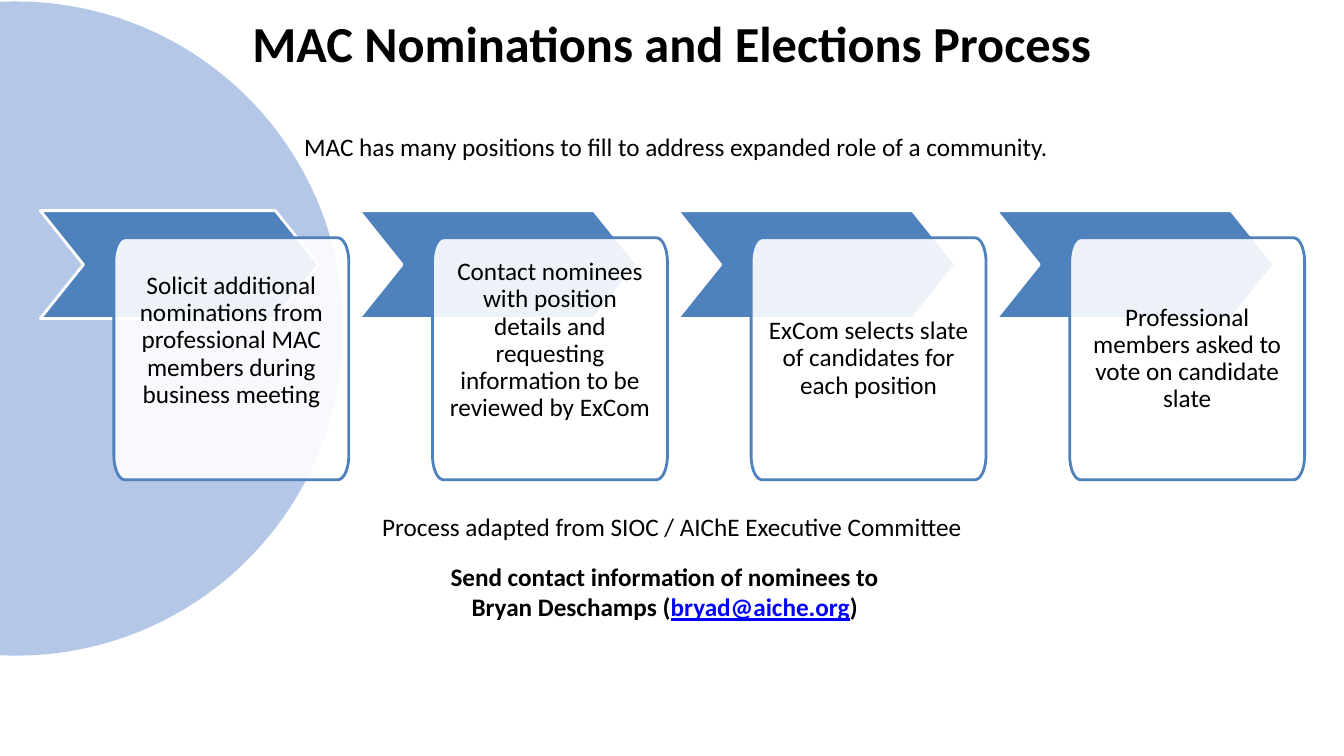
import math
from lxml import etree
from pptx import Presentation, util as u
from pptx.dml.color import RGBColor
from pptx.enum import shapes, text
from pptx.oxml.ns import qn

HUE = {"disc": "B4C7E7", "step": "4F81BD", "white": "FFFFFF",
       "ink": "000000", "mail": "0000FF"}
LEFT, TOP, PITCH = 0.4, 2.09, 3.16
STEPS = [
    ("Solicit additional nominations from professional MAC members during business meeting", 0.5),
    ("Contact nominees with position details and requesting information to be reviewed by ExCom", 0.5),
    ("ExCom selects slate of candidates for each position", 0.14),
    ("Professional members asked to vote on candidate slate", 0.14),
]


def rgb(name):
    return RGBColor.from_string(HUE[name])


def paint(shape, fill, line=None):
    shape.shadow.inherit = False
    shape.fill.solid()
    shape.fill.fore_color.rgb = rgb(fill)
    if line:
        shape.line.color.rgb = rgb(line)
        shape.line.width = u.Pt(2)
    else:
        shape.line.fill.background()


def arc(cx, cy, rx, ry, start, end, count):
    turns = [math.radians(start + (end - start) * i / count) for i in range(count + 1)]
    return [(cx + rx * math.cos(t), cy + ry * math.sin(t)) for t in turns]


def outline(slide, points):
    dots = [(u.Inches(x), u.Inches(y)) for x, y in points]
    pen = slide.shapes.build_freeform(*dots[0])
    pen.add_line_segments(dots[1:], close=True)
    return pen.convert_to_shape()


def write(para, words, size=18, bold=False, hue="ink", under=False):
    run = para.add_run()
    run.text = words
    font = run.font
    font.name, font.size, font.bold, font.underline = "Calibri", u.Pt(size), bold, under
    font.color.rgb = rgb(hue)


def label(slide, x, y, w, h):
    box = slide.shapes.add_textbox(*map(u.Inches, (x, y, w, h)))
    box.text_frame.word_wrap = True
    para = box.text_frame.paragraphs[0]
    para.alignment = text.PP_ALIGN.CENTER
    return box.text_frame, para


def disc(slide):
    mid, rad = 0.16, 3.245
    edge = math.degrees(math.acos(-mid / rad))
    paint(outline(slide, arc(mid, 3.26, rad, rad, -edge, edge, 120)), "disc")


def card(slide, x, y, w, h, words, base):
    rx, ry = 0.11, 0.24
    mids = [(x + rx, y + ry), (x + w - rx, y + ry),
            (x + w - rx, y + h - ry), (x + rx, y + h - ry)]
    points = [dot for i, (cx, cy) in enumerate(mids)
              for dot in arc(cx, cy, rx, ry, 180 + 90 * i, 270 + 90 * i, 12)]
    shape = outline(slide, points)
    paint(shape, "white", "step")
    tint = shape.fill._xPr.find(qn("a:solidFill"))[0]
    etree.SubElement(tint, qn("a:alpha")).set("val", "90000")
    frame = shape.text_frame
    frame.word_wrap = True
    frame.vertical_anchor = text.MSO_ANCHOR.MIDDLE
    frame.margin_left = frame.margin_right = frame.margin_top = u.Inches(0.14)
    frame.margin_bottom = u.Inches(base)
    para = frame.paragraphs[0]
    para.alignment = text.PP_ALIGN.CENTER
    para.line_spacing = 0.9
    write(para, words)


def step(slide, col, words, base):
    x = LEFT + PITCH * col
    arrow = slide.shapes.add_shape(shapes.MSO_SHAPE.CHEVRON,
                                   *map(u.Inches, (x, TOP, 2.76, 1.07)))
    arrow.adjustments[0] = 0.4
    paint(arrow, "step", "white")
    card(slide, x + 0.73, TOP + 0.27, 2.33, 2.4, words, base)


def main():
    deck = Presentation()
    deck.slide_width, deck.slide_height = u.Inches(13.33), u.Inches(7.5)
    slide = deck.slides.add_slide(deck.slide_layouts[6])
    disc(slide)

    frame, para = label(slide, 1.01, 0.12, 11.31, 0.63)
    frame.margin_left = frame.margin_right = frame.margin_top = frame.margin_bottom = 0
    write(para, "MAC Nominations and Elections Process", 36, True)

    for col, (words, base) in enumerate(STEPS):
        step(slide, col, words, base)

    for x, y, words in [
        (1.05, 1.25, "MAC has many positions to fill to address expanded role of a community."),
        (1.01, 5.02, "Process adapted from SIOC / AIChE Executive Committee"),
    ]:
        write(label(slide, x, y, 11.31, 0.4)[1], words)

    para = label(slide, 3.5, 5.52, 6.24, 0.71)[1]
    write(para, "Send contact information of nominees to ", bold=True)
    para.add_line_break()
    write(para, "Bryan Deschamps (", bold=True)
    write(para, "bryad@aiche.org", bold=True, hue="mail", under=True)
    write(para, ") ", bold=True)

    deck.save("out.pptx")


if __name__ == "__main__":
    main()
